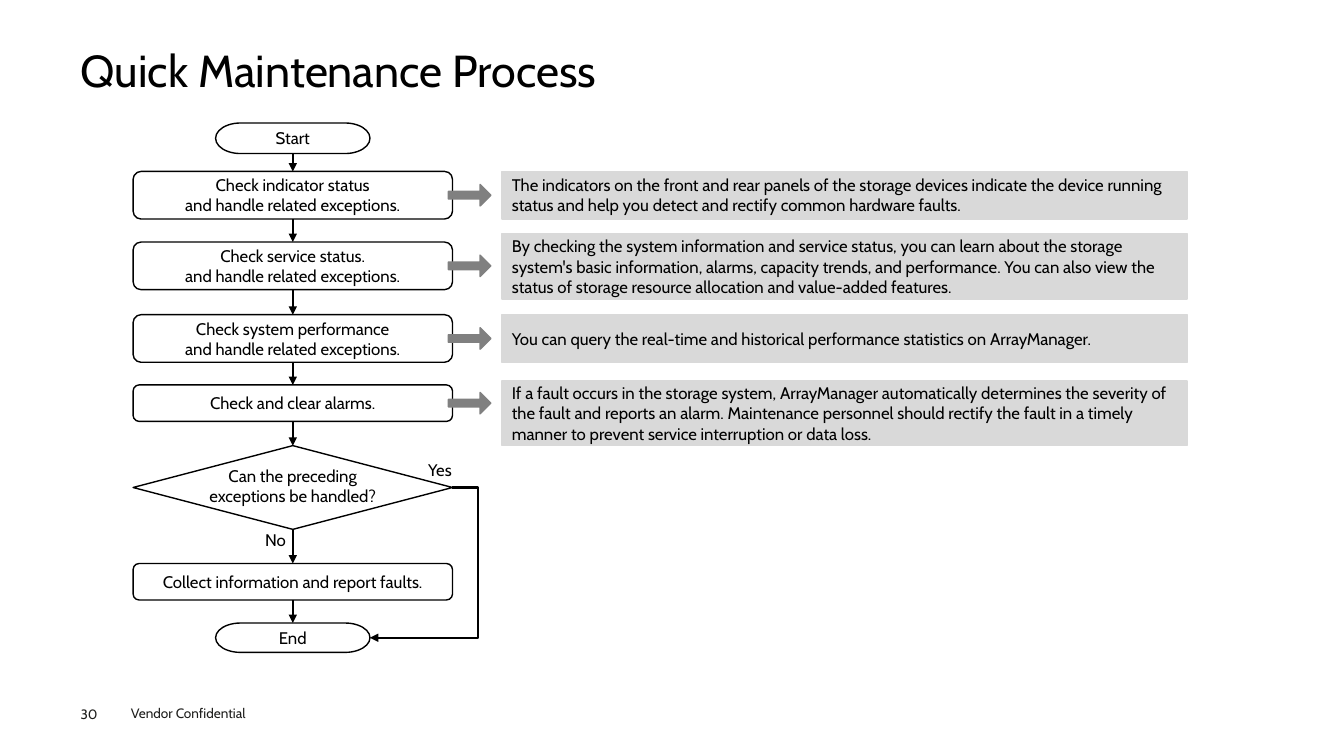
"""Build the Quick Maintenance Process flowchart slide."""
from itertools import pairwise
from lxml.etree import SubElement
from pptx import Presentation
from pptx.dml.color import RGBColor
from pptx.enum.shapes import MSO_CONNECTOR, MSO_SHAPE
from pptx.enum.text import MSO_ANCHOR, PP_ALIGN
from pptx.oxml.ns import qn
from pptx.util import Cm, Pt

BLACK = RGBColor(0x00, 0x00, 0x00)
WHITE = RGBColor(0xFF, 0xFF, 0xFF)
FOOTER_INK = RGBColor(0x1D, 0x1D, 0x1B)
NOTE_GREY = RGBColor(0xD9, 0xD9, 0xD9)
ARROW_GREY = RGBColor(0x80, 0x80, 0x80)

FLOW_CENTER = 7.38
STEP_WIDTH = 8.05
TERMINATOR_WIDTH = 3.89
ARROW_HEIGHT = 0.54


def write(shape, text, size=12, color=BLACK, align=PP_ALIGN.LEFT):
    frame = shape.text_frame
    frame.word_wrap = True
    frame.text = text
    for paragraph in frame.paragraphs:
        paragraph.alignment = align
        for run in paragraph.runs:
            run.font.name = "Cabin"
            run.font.size = Pt(size)
            run.font.color.rgb = color


def add_block(kind, left, top, width, height, fill, line):
    block = slide.shapes.add_shape(kind, Cm(left), Cm(top), Cm(width), Cm(height))
    block.shadow.inherit = False
    block.fill.solid()
    block.fill.fore_color.rgb = fill
    block.line.color.rgb = line
    block.line.width = Pt(1)
    block.text_frame.vertical_anchor = MSO_ANCHOR.MIDDLE
    return block


presentation = Presentation()
presentation.slide_width = Cm(33.87)
presentation.slide_height = Cm(19.05)
slide = presentation.slides.add_slide(presentation.slide_layouts[6])

LABELS = [
    ("Quick Maintenance Process", 2.03, 1.24, 29.8, 1.37, 32, BLACK, 0),
    ("30", 2.03, 17.78, 1.4, 0.41, 9.7, FOOTER_INK, 0),
    ("Vendor Confidential", 3.05, 17.65, 4.06, 0.69, 9.7, FOOTER_INK, None),
    ("Yes", 10.54, 11.46, 1.27, 0.81, 12, BLACK, None),
    ("No", 6.43, 13.23, 1.19, 0.81, 12, BLACK, None),
]
for text, left, top, width, height, size, color, inset in LABELS:
    label = slide.shapes.add_textbox(Cm(left), Cm(top), Cm(width), Cm(height))
    write(label, text, size, color)
    if inset is not None:
        frame = label.text_frame
        frame.margin_left = frame.margin_right = Cm(inset)
        frame.margin_top = frame.margin_bottom = Cm(inset)
    if size == 32:
        label.text_frame.paragraphs[0].line_spacing = 0.9

STEPS = [
    (MSO_SHAPE.FLOWCHART_TERMINATOR, 3.1, 0.77, TERMINATOR_WIDTH, "Start"),
    (MSO_SHAPE.ROUNDED_RECTANGLE, 4.32, 1.2, STEP_WIDTH,
     "Check indicator status\nand handle related exceptions."),
    (MSO_SHAPE.ROUNDED_RECTANGLE, 6.1, 1.2, STEP_WIDTH,
     "Check service status.\nand handle related exceptions."),
    (MSO_SHAPE.ROUNDED_RECTANGLE, 7.93, 1.2, STEP_WIDTH,
     "Check system performance\nand handle related exceptions."),
    (MSO_SHAPE.ROUNDED_RECTANGLE, 9.7, 0.92, STEP_WIDTH, "Check and clear alarms."),
    (MSO_SHAPE.DIAMOND, 11.23, 2.11, STEP_WIDTH,
     "Can the preceding\nexceptions be handled?"),
    (MSO_SHAPE.ROUNDED_RECTANGLE, 14.2, 0.92, STEP_WIDTH,
     "Collect information and report faults."),
    (MSO_SHAPE.FLOWCHART_TERMINATOR, 15.7, 0.74, TERMINATOR_WIDTH, "End"),
]
flow = []
for kind, top, height, width, text in STEPS:
    step = add_block(kind, FLOW_CENTER - width / 2, top, width, height, WHITE, BLACK)
    write(step, text, align=PP_ALIGN.CENTER)
    flow.append(step)

decision, end = flow[5], flow[-1]
decision_frame = decision.text_frame
decision_frame.word_wrap = False
decision_frame.margin_left = decision_frame.margin_right = decision_frame.margin_top = 0
decision_frame.margin_bottom = Cm(0.1)

links = []
for upper, lower in pairwise(flow):
    link = slide.shapes.add_connector(MSO_CONNECTOR.STRAIGHT, 0, 0, 0, 0)
    link.begin_connect(upper, 2)
    link.end_connect(lower, 0)
    links.append(link)

yes_branch = slide.shapes.add_connector(
    MSO_CONNECTOR.ELBOW,
    decision.left + decision.width, decision.top + decision.height // 2,
    end.left + end.width, end.top + end.height // 2)
bend = yes_branch._element.spPr.find(qn("a:prstGeom")).get_or_add_avLst()
SubElement(bend, qn("a:gd"), name="adj1", fmla="val -30500")

for link in links + [yes_branch]:
    link.line.color.rgb = BLACK
    link.line.width = Pt(1.5)
    SubElement(link.line._get_or_add_ln(), qn("a:tailEnd"), type="triangle")
    SubElement(link._element.spPr, qn("a:effectLst"))

NOTES = [
    (4.32, 1.2, "The indicators on the front and rear panels of the storage devices "
     "indicate the device running status and help you detect and rectify common "
     "hardware faults."),
    (5.89, 1.65, "By checking the system information and service status, you can learn "
     "about the storage system's basic information, alarms, capacity trends, and "
     "performance. You can also view the status of storage resource allocation and "
     "value-added features."),
    (7.93, 1.2, "You can query the real-time and historical performance statistics on "
     "ArrayManager."),
    (9.6, 1.63, "If a fault occurs in the storage system, ArrayManager automatically "
     "determines the severity of the fault and reports an alarm. Maintenance personnel "
     "should rectify the fault in a timely manner to prevent service interruption or "
     "data loss."),
]
for (top, height, text), (_, step_top, step_height, _, _) in zip(NOTES, STEPS[1:5]):
    note = add_block(MSO_SHAPE.RECTANGLE, 12.65, top, 17.27, height, NOTE_GREY, NOTE_GREY)
    write(note, text)
    arrow_top = step_top + (step_height - ARROW_HEIGHT) / 2
    arrow = add_block(MSO_SHAPE.RIGHT_ARROW, 11.3, arrow_top, 1.07, ARROW_HEIGHT,
                      ARROW_GREY, ARROW_GREY)
    arrow.adjustments[0] = 0.35

presentation.save("out.pptx")
